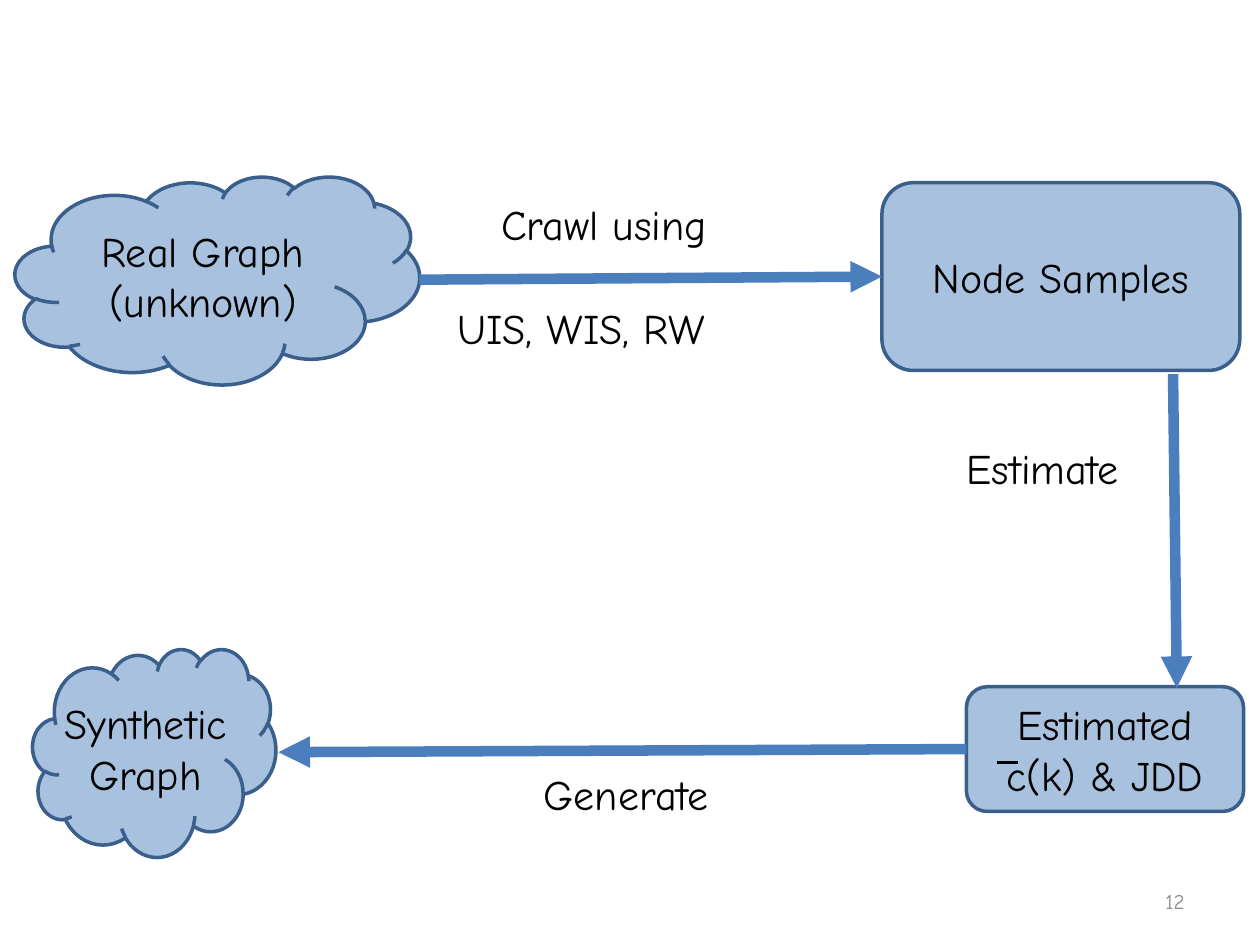
"""Build the slide on crawling a graph and generating a synthetic one."""
from dataclasses import dataclass

from lxml import etree
from pptx import Presentation
from pptx.dml.color import RGBColor
from pptx.enum.shapes import MSO_CONNECTOR, MSO_SHAPE
from pptx.enum.text import MSO_ANCHOR, PP_ALIGN
from pptx.oxml.ns import qn
from pptx.util import Inches, Pt

CLOUD, ROUNDED = MSO_SHAPE.CLOUD, MSO_SHAPE.ROUNDED_RECTANGLE
STRAIGHT = MSO_CONNECTOR.STRAIGHT
LEFT, CENTER, RIGHT = PP_ALIGN.LEFT, PP_ALIGN.CENTER, PP_ALIGN.RIGHT
TOP, MIDDLE = MSO_ANCHOR.TOP, MSO_ANCHOR.MIDDLE
LEFT_SIDE = 1

BLUE = RGBColor(0x4F, 0x81, 0xBD)
OUTLINE = RGBColor(0x3A, 0x5F, 0x8C)
ARROW = RGBColor(0x4B, 0x7E, 0xBC)
BLACK = RGBColor(0, 0, 0)
GRAY = RGBColor(0x8C, 0x8C, 0x8C)
FONT = "Comic Neue"


@dataclass
class Node:
    kind: int
    area: tuple
    lines: tuple


@dataclass
class Label:
    area: tuple
    text: str
    align: int = LEFT
    anchor: int = TOP
    size: int = 24
    color: RGBColor = BLACK


@dataclass
class Line:
    start: tuple
    end: tuple
    color: RGBColor = ARROW
    width: float = 6
    arrow: bool = True


NODES = {
    "samples": Node(ROUNDED, (7, 1.45, 2.84, 1.49), ("Node Samples",)),
    "real": Node(CLOUD, (0.12, 1.4, 3.21, 1.65), ("Real Graph", "(unknown)")),
    "estimated": Node(ROUNDED, (7.67, 5.45, 2.2, 0.99), ("Estimated", "c(k) & JDD")),
    "synthetic": Node(CLOUD, (0.26, 5.15, 1.93, 1.65), ("Synthetic", "Graph")),
}
LABELS = [
    Label((3.88, 1.53, 2.77, 0.5), "Crawl using"),
    Label((3.53, 2.35, 2.96, 0.5), "UIS, WIS, RW"),
    Label((3.43, 6.05, 3.08, 0.5), "Generate", CENTER),
    Label((7.57, 3.46, 1.98, 0.5), "Estimate"),
    Label((7.17, 6.95, 2.33, 0.4), "12", RIGHT, MIDDLE, 12, GRAY),
]
CRAWL = Line((3.33, 2.22), (7, 2.2))
GENERATE = Line((7.67, 5.95), (2.21, 5.97))
ESTIMATE = Line((9.31, 2.97), (9.34, 5.46))
MEAN_BAR = Line((7.91, 6.05), (8.08, 6.05), BLACK, 1.5, False)


def write_lines(frame, lines: tuple, align: int, size: int, color: RGBColor) -> None:
    """Write one formatted paragraph for each line."""
    for number, line in enumerate(lines):
        para = frame.add_paragraph() if number else frame.paragraphs[0]
        para.alignment = align
        span = para.add_run()
        span.text = line
        for name, value in {"name": FONT, "size": Pt(size)}.items():
            setattr(span.font, name, value)
        span.font.color.rgb = color


def draw_node(page, node: Node):
    """Draw a half-transparent shape with centred text."""
    box = page.shapes.add_shape(node.kind, *map(Inches, node.area))
    box.shadow.inherit = False
    box.fill.solid()
    box.fill.fore_color.rgb = BLUE
    tint = box.fill._xPr.find(qn("a:solidFill"))[0]
    etree.SubElement(tint, qn("a:alpha"), val="49000")
    box.line.color.rgb = OUTLINE
    box.line.width = Pt(2)
    for name, value in {"word_wrap": False, "vertical_anchor": MIDDLE}.items():
        setattr(box.text_frame, name, value)
    write_lines(box.text_frame, node.lines, CENTER, 24, BLACK)
    return box


def draw_label(page, label: Label) -> None:
    """Draw a wrapping text box."""
    frame = page.shapes.add_textbox(*map(Inches, label.area)).text_frame
    for name, value in {"word_wrap": True, "vertical_anchor": label.anchor}.items():
        setattr(frame, name, value)
    write_lines(frame, (label.text,), label.align, label.size, label.color)


def draw_line(page, line: Line):
    """Draw a straight line, with an arrowhead at its end if wanted."""
    connector = page.shapes.add_connector(STRAIGHT, *map(Inches, line.start + line.end))
    connector.line.color.rgb = line.color
    connector.line.width = Pt(line.width)
    if line.arrow:
        etree.SubElement(connector.line._get_or_add_ln(), qn("a:tailEnd"), type="triangle")
    etree.SubElement(connector._element.spPr, qn("a:effectLst"))
    return connector


def main() -> None:
    """Build and save the deck."""
    deck = Presentation()
    deck.slide_width, deck.slide_height = Inches(10), Inches(7.5)
    page = deck.slides.add_slide(deck.slide_layouts[6])
    boxes = {name: draw_node(page, node) for name, node in NODES.items()}
    draw_line(page, CRAWL).end_connect(boxes["samples"], LEFT_SIDE)
    draw_line(page, GENERATE).begin_connect(boxes["estimated"], LEFT_SIDE)
    for line in (ESTIMATE, MEAN_BAR):
        draw_line(page, line)
    for label in LABELS:
        draw_label(page, label)
    deck.save("out.pptx")


if __name__ == "__main__":
    main()
